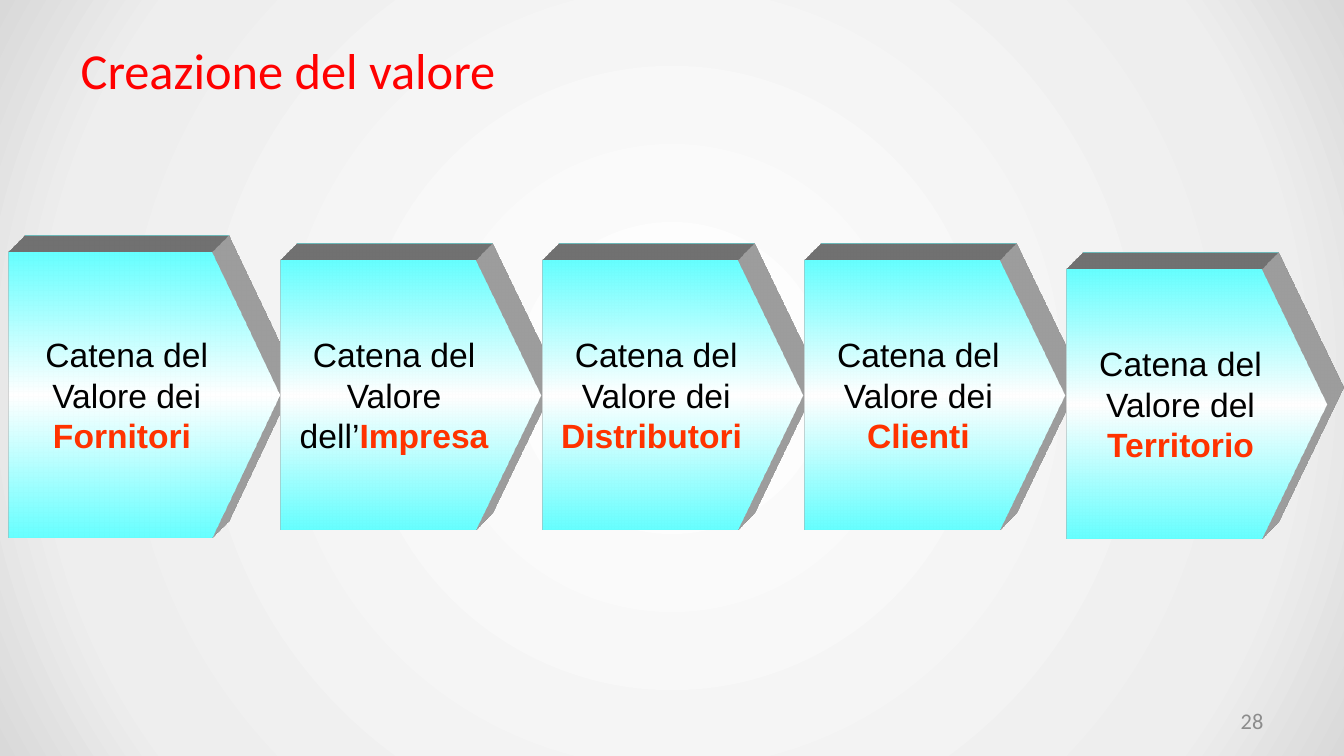
from lxml.etree import SubElement
from pptx import Presentation
from pptx.dml.color import RGBColor
from pptx.enum.shapes import MSO_SHAPE
from pptx.enum.text import MSO_ANCHOR, PP_ALIGN
from pptx.oxml.ns import qn
from pptx.util import Inches, Pt

COLORS = {
    "title": "FF0000", "text": "000000", "actor": "FF3300", "number": "8C8C8C",
    "cyan": "66FFFF", "white": "FFFFFF", "light": "EEEEEE", "edge": "D9D9D9",
    "depth": "C0C0C0",
}
# First and last links differ slightly from the even row between them
LINKS = [
    ((0.08, 2.5, 2.69, 2.83), [[("Catena del Valore dei ", "text"), ("Fornitori ", "actor")]]),
    ((2.78, 2.58, 2.58, 2.67), [[("Catena del Valore dell’", "text"), ("Impresa", "actor")]]),
    ((5.38, 2.58, 2.58, 2.67), [[("Catena del Valore dei ", "text"), ("Distributori ", "actor")]]),
    ((7.98, 2.58, 2.58, 2.67), [[("Catena del Valore dei ", "text"), ("Clienti", "actor")]]),
    ((10.58, 2.67, 2.58, 2.67), [[("Catena del Valore del", "text")], [("Territorio", "actor")]]),
]


def add_text(paragraph, text, *, size, font, color, bold=False, align=PP_ALIGN.LEFT):
    paragraph.alignment = align
    run = paragraph.add_run()
    run.text = text
    run.font.size = Pt(size)
    run.font.name = font
    run.font.bold = bold
    run.font.color.rgb = RGBColor.from_string(COLORS[color])


def set_frame(frame):
    frame.word_wrap = True
    frame.vertical_anchor = MSO_ANCHOR.MIDDLE
    frame.margin_left = frame.margin_right = Inches(0.13)
    frame.margin_top = frame.margin_bottom = Inches(0.07)


def set_stops(gradient, stops):
    stop_list = gradient.find(qn("a:gsLst"))
    for stop in list(stop_list):
        stop_list.remove(stop)
    for percent, color in stops:
        stop = SubElement(stop_list, qn("a:gs"), pos=str(percent * 1000))
        SubElement(stop, qn("a:srgbClr"), val=COLORS[color])


def paint_background(slide):
    slide.background.fill.gradient()
    gradient = slide.element.find(".//" + qn("a:gradFill"))
    set_stops(gradient, [(0, "white"), (81, "light"), (100, "edge")])
    linear = gradient.find(qn("a:lin"))
    if linear is not None:
        gradient.remove(linear)
    radial = SubElement(gradient, qn("a:path"), path="circle")
    SubElement(radial, qn("a:fillToRect"), l="50000", t="50000", r="50000", b="50000")


def add_title(slide, box):
    title = slide.shapes.title
    title.left, title.top, title.width, title.height = map(Inches, box)
    set_frame(title.text_frame)
    add_text(title.text_frame.paragraphs[0], "Creazione del valore",
             size=36, font="Calibri", color="title")


def add_page_number(slide, box):
    frame = slide.shapes.add_textbox(*map(Inches, box)).text_frame
    set_frame(frame)
    add_text(frame.paragraphs[0], "28", size=16, font="Calibri",
             color="number", align=PP_ALIGN.RIGHT)


def extrude(properties):
    scene = SubElement(properties, qn("a:scene3d"))
    SubElement(scene, qn("a:camera"), prst="legacyObliqueTopRight")
    SubElement(scene, qn("a:lightRig"), rig="legacyFlat3", dir="b")
    solid = SubElement(properties, qn("a:sp3d"), extrusionH=str(Inches(0.47)),
                       prstMaterial="legacyMatte")
    depth = SubElement(solid, qn("a:extrusionClr"))
    SubElement(depth, qn("a:srgbClr"), val=COLORS["depth"])


def add_link(slide, box, paragraphs):
    link = slide.shapes.add_shape(MSO_SHAPE.PENTAGON, *map(Inches, box))
    link.adjustments[0] = 0.25
    link.shadow.inherit = False
    link.line.fill.background()
    link.fill.gradient()
    link.fill.gradient_angle = 270
    properties = link.element.spPr
    set_stops(properties.find(qn("a:gradFill")), [(0, "cyan"), (50, "white"), (100, "cyan")])
    extrude(properties)

    frame = link.text_frame
    frame.word_wrap = True
    frame.vertical_anchor = MSO_ANCHOR.MIDDLE
    for index, runs in enumerate(paragraphs):
        paragraph = frame.add_paragraph() if index else frame.paragraphs[0]
        for text, color in runs:
            add_text(paragraph, text, size=24, font="Arial", color=color,
                     bold=color == "actor", align=PP_ALIGN.CENTER)


def main():
    deck = Presentation()
    deck.slide_width, deck.slide_height = Inches(13.33), Inches(7.5)
    slide = deck.slides.add_slide(deck.slide_layouts[5])
    paint_background(slide)
    add_page_number(slide, (9.55, 6.95, 3.11, 0.4))
    add_title(slide, (0.67, 0.3, 12, 0.78))
    # Value chain, from suppliers to territory
    for box, paragraphs in LINKS:
        add_link(slide, box, paragraphs)
    deck.save("out.pptx")


if __name__ == "__main__":
    main()
